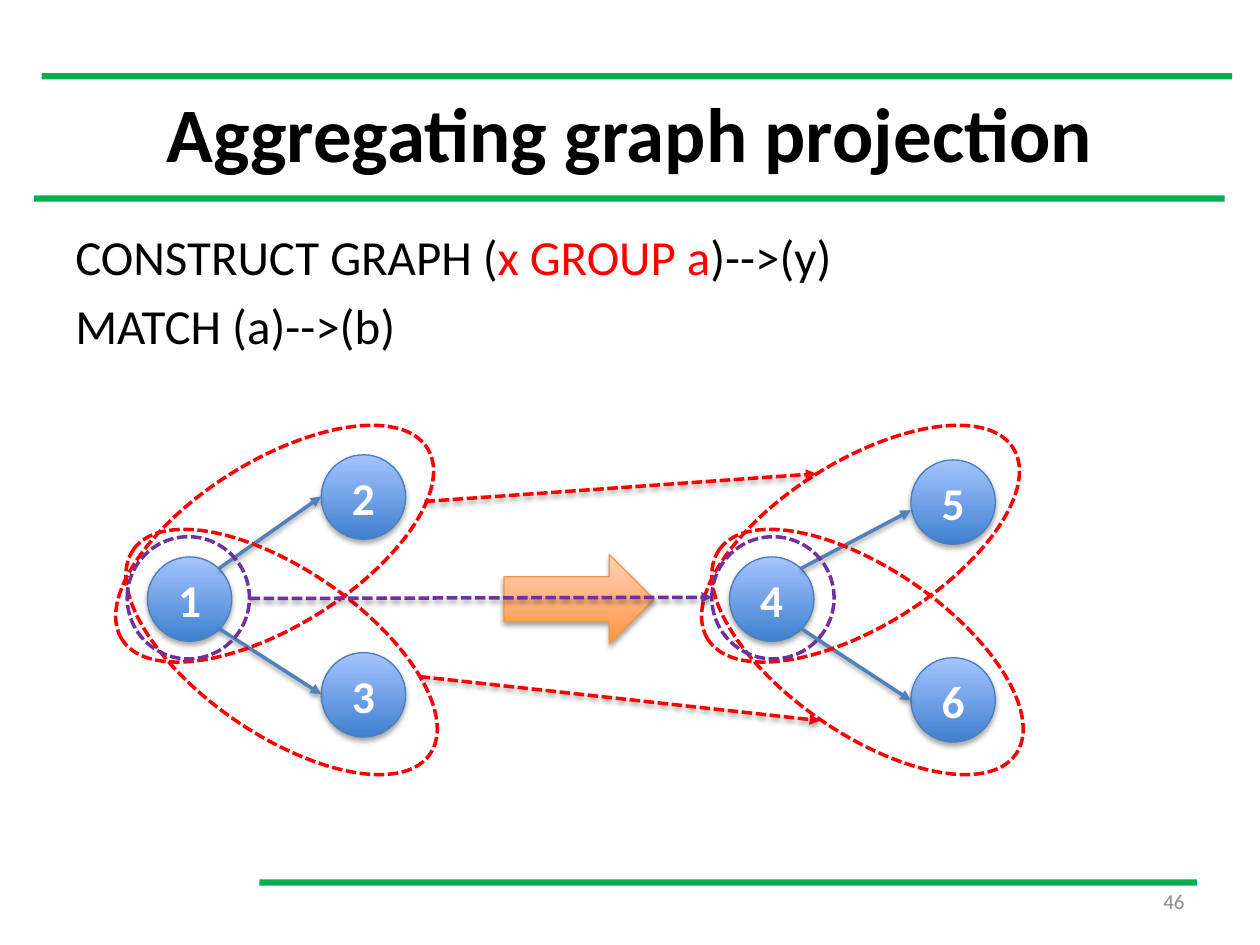
import pptx
import pptx.util
from lxml import etree
from pptx.dml.color import RGBColor
from pptx.enum.dml import MSO_LINE
from pptx.enum.shapes import MSO_CONNECTOR, MSO_SHAPE
from pptx.enum.text import MSO_ANCHOR, PP_ALIGN
from pptx.oxml.ns import qn

GREEN = RGBColor(0x00, 0xB0, 0x50)
BLACK = RGBColor(0x00, 0x00, 0x00)
WHITE = RGBColor(0xFF, 0xFF, 0xFF)
GRAY = RGBColor(0x8C, 0x8C, 0x8C)
RED = RGBColor(0xFF, 0x00, 0x00)
PURPLE = RGBColor(0x70, 0x30, 0xA0)
EDGE_BLUE = RGBColor(0x4F, 0x81, 0xBD)
NODE_LINE = RGBColor(0x4B, 0x7E, 0xBC)
NODE_GRADIENT = (RGBColor(0x3F, 0x80, 0xCE), RGBColor(0xA4, 0xC4, 0xFF))
ARROW_LINE = RGBColor(0xF6, 0x92, 0x40)
ARROW_GRADIENT = (RGBColor(0xFF, 0x95, 0x3E), RGBColor(0xFF, 0xD2, 0xBD))

FONT = "Calibri"
COLUMNS, ROWS = 100, 75
CELL = pptx.util.Inches(10) // COLUMNS
NODE_SIZE = 6.7
RING_SIZE = 9.7


def grid(*cells):
    """Turn counts of grid cells into slide lengths."""
    return [round(count * CELL) for count in cells]


def add_shadow(item, opacity, distance):
    """Cast a soft black shadow straight down; distance is in points."""
    properties = item._element.spPr
    for old in properties.findall(qn("a:effectLst")):
        properties.remove(old)
    effects = etree.SubElement(properties, qn("a:effectLst"))
    shadow = etree.SubElement(
        effects, qn("a:outerShdw"), blurRad=str(pptx.util.Pt(3.1)),
        dist=str(pptx.util.Pt(distance)), dir="5400000", rotWithShape="0")
    color = etree.SubElement(shadow, qn("a:srgbClr"), val=str(BLACK))
    etree.SubElement(color, qn("a:alpha"), val=str(opacity * 1000))


def style_font(paragraph, size, color, bold=False):
    font = paragraph.font
    font.name, font.size, font.bold = FONT, pptx.util.Pt(size), bold
    font.color.rgb = color


def add_rule(slide, left, top, width):
    rule = slide.shapes.add_shape(MSO_SHAPE.RECTANGLE, *grid(left, top, width, 0.5))
    rule.shadow.inherit = False
    rule.fill.solid()
    rule.fill.fore_color.rgb = GREEN
    rule.line.fill.background()


def add_text(slide, box, lines, size, align, anchor, color=BLACK, bold=False):
    """Write lines, each a list of (text, colour or None) pieces."""
    frame = slide.shapes.add_textbox(*grid(*box)).text_frame
    frame.word_wrap = True
    frame.vertical_anchor = anchor
    for index, pieces in enumerate(lines):
        paragraph = frame.paragraphs[0] if index == 0 else frame.add_paragraph()
        paragraph.alignment = align
        if index:
            paragraph.space_before = pptx.util.Pt(size * 0.2)
        style_font(paragraph, size, color, bold)
        for text, accent in pieces:
            run = paragraph.add_run()
            run.text = text
            if accent is not None:
                run.font.color.rgb = accent


def add_glossy(slide, kind, box, gradient, outline):
    """Add a shape shaded from dark at the bottom to light at the top."""
    glossy = slide.shapes.add_shape(kind, *grid(*box))
    glossy.fill.gradient()
    glossy.fill.gradient_angle = 90
    for stop, color in zip(glossy.fill.gradient_stops, gradient):
        stop.color.rgb = color
    glossy.line.color.rgb = outline
    glossy.line.width = pptx.util.Pt(0.75)
    add_shadow(glossy, 35, 1.8)
    return glossy


def add_node(slide, label, left, top):
    node = add_glossy(slide, MSO_SHAPE.OVAL, (left, top, NODE_SIZE, NODE_SIZE),
                      NODE_GRADIENT, NODE_LINE)
    frame = node.text_frame
    frame.vertical_anchor = MSO_ANCHOR.MIDDLE
    frame.word_wrap = False
    paragraph = frame.paragraphs[0]
    paragraph.text = label
    paragraph.alignment = PP_ALIGN.CENTER
    style_font(paragraph, 26, WHITE, bold=True)


def add_arrow(slide, start, end, color, dashed=False):
    arrow = slide.shapes.add_connector(MSO_CONNECTOR.STRAIGHT, *grid(*start, *end))
    arrow.line.color.rgb = color
    arrow.line.width = pptx.util.Pt(2)
    if dashed:
        arrow.line.dash_style = MSO_LINE.SQUARE_DOT
    etree.SubElement(arrow.line._get_or_add_ln(), qn("a:tailEnd"), type="triangle")
    add_shadow(arrow, 38, 1.6)


def add_outline(slide, box, color, rotation=0):
    outline = slide.shapes.add_shape(MSO_SHAPE.OVAL, *grid(*box))
    outline.shadow.inherit = False
    outline.rotation = rotation
    outline.fill.background()
    outline.line.color.rgb = color
    outline.line.width = pptx.util.Pt(2)
    outline.line.dash_style = MSO_LINE.SQUARE_DOT


def add_graph(slide, labels, source_left, target_left, target_tops, edge_ends):
    """Draw a source node with edges to an upper and a lower target."""
    source_top = 44.2
    add_node(slide, labels[0], source_left, source_top)
    for label, top, end, start in zip(labels[1:], target_tops, edge_ends, (45.1, 49.9)):
        add_node(slide, label, target_left, top)
        add_arrow(slide, (source_left + 5.7, start), (target_left, end), EDGE_BLUE)


def main():
    deck = pptx.Presentation()
    deck.slide_width, deck.slide_height = grid(COLUMNS, ROWS)
    slide = deck.slides.add_slide(deck.slide_layouts[6])

    for left, top, width in ((20.6, 69.8, 74.4), (3.3, 5.8, 94.5), (2.7, 15.5, 94.5)):
        add_rule(slide, left, top, width)
    add_text(slide, (5, 4.2, 90, 12.5), [[("Aggregating graph projection", None)]],
             44, PP_ALIGN.CENTER, MSO_ANCHOR.MIDDLE, bold=True)
    query = [
        [("CONSTRUCT GRAPH (", None), ("x GROUP a", RED), (")-->(y)", None)],
        [("MATCH (a)-->(b)", None)],
    ]
    add_text(slide, (5, 17.5, 90, 49.5), query, 28, PP_ALIGN.LEFT, MSO_ANCHOR.TOP)

    add_graph(slide, "123", 11.7, 25.5, (36.1, 51.8), (39.4, 55.1))
    add_graph(slide, "456", 57.9, 72.3, (36.5, 52.2), (40.5, 55.6))
    add_glossy(slide, MSO_SHAPE.RIGHT_ARROW, (40, 44, 11.9, 7.1),
               ARROW_GRADIENT, ARROW_LINE)

    for match_left in (7.5, 54):
        add_outline(slide, (match_left, 36.6, 28.6, 13.1), RED, 328)
        add_outline(slide, (match_left + 0.55, 45.2, 28.6, 13.1), RED, 34.5)
    add_arrow(slide, (33.7, 39.8), (64.8, 37.6), RED, dashed=True)
    add_arrow(slide, (33.3, 53.7), (65.1, 57.2), RED, dashed=True)

    ring_lefts = (10.1, 56.5)
    for ring_left in ring_lefts:
        add_outline(slide, (ring_left, 42.6, RING_SIZE, RING_SIZE), PURPLE)
    add_arrow(slide, (ring_lefts[0] + RING_SIZE, 47.5), (ring_lefts[1], 47.4),
              PURPLE, dashed=True)

    add_text(slide, (71.7, 69.5, 23.3, 4), [[("46", None)]],
             12, PP_ALIGN.RIGHT, MSO_ANCHOR.MIDDLE, GRAY)
    deck.save("out.pptx")


if __name__ == "__main__":
    main()
